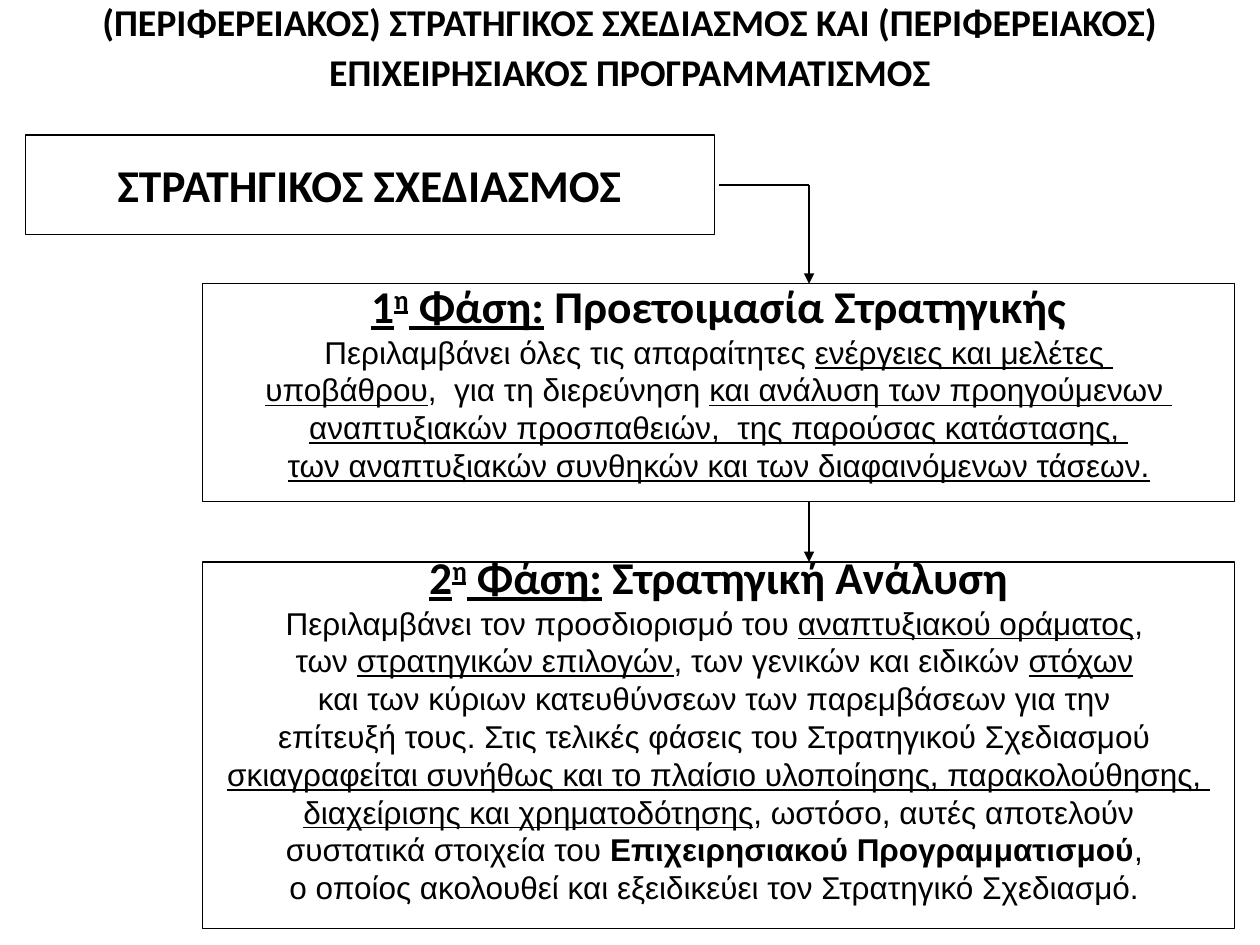
from pptx import Presentation
from pptx.dml.color import RGBColor
from pptx.enum.shapes import MSO_CONNECTOR as Connector, MSO_SHAPE as Shape
from pptx.enum.text import MSO_ANCHOR as Anchor, PP_ALIGN as Align
from pptx.oxml.ns import qn
from pptx.util import Cm, Pt
from lxml.etree import SubElement

# Content: each body line is a list of (text, style); u = underlined, b = bold
TITLE = ("(ΠΕΡΙΦΕΡΕΙΑΚΟΣ) ΣΤΡΑΤΗΓΙΚΟΣ ΣΧΕΔΙΑΣΜΟΣ ΚΑΙ (ΠΕΡΙΦΕΡΕΙΑΚΟΣ) "
         "ΕΠΙΧΕΙΡΗΣΙΑΚΟΣ ΠΡΟΓΡΑΜΜΑΤΙΣΜΟΣ")
START = "ΣΤΡΑΤΗΓΙΚΟΣ ΣΧΕΔΙΑΣΜΟΣ"
PHASES = [
    {"number": "1", "name": "Προετοιμασία Στρατηγικής",
     "top": 5.72, "height": 4.39, "bottom_inset": 0.6,
     "lines": [
         [("Περιλαμβάνει όλες τις απαραίτητες ", ""), ("ενέργειες και μελέτες ", "u")],
         [("υποβάθρου", "u"), (",  για τη διερεύνηση ", ""),
          ("και ανάλυση των προηγούμενων ", "u")],
         [("αναπτυξιακών προσπαθειών,  της παρούσας κατάστασης, ", "u")],
         [("των αναπτυξιακών συνθηκών και των διαφαινόμενων τάσεων.", "u")],
     ]},
    {"number": "2", "name": "Στρατηγική Ανάλυση",
     "top": 11.33, "height": 7.39, "bottom_inset": 0.85,
     "lines": [
         [("Περιλαμβάνει τον προσδιορισμό του ", ""),
          ("αναπτυξιακού οράματος", "u"), (", ", "")],
         [("των ", ""), ("στρατηγικών επιλογών", "u"),
          (", των γενικών και ειδικών ", ""), ("στόχων", "u"), (" ", "")],
         [("και των κύριων κατευθύνσεων των παρεμβάσεων για την ", "")],
         [("επίτευξή τους. Στις τελικές φάσεις του Στρατηγικού Σχεδιασμού ", "")],
         [("σκιαγραφείται συνήθως και το πλαίσιο υλοποίησης, παρακολούθησης, ", "u")],
         [("διαχείρισης και χρηματοδότησης", "u"), (", ωστόσο, αυτές αποτελούν", "")],
         [("συστατικά στοιχεία του ", ""),
          ("Επιχειρησιακού Προγραμματισμού", "b"), (", ", "")],
         [("ο οποίος ακολουθεί και εξειδικεύει τον Στρατηγικό Σχεδιασμό. ", "")],
     ]},
]

THEME = {
    "ink": RGBColor(0, 0, 0),
    "title": ("Calibri", 21.6), "heading": ("Calibri", 26), "body": ("Arial", 18),
    "title_pitch": 28.5, "box_line": 0.75, "arrow_line": 1, "superscript": "30000",
}

# Layout in centimetres
START_BOX = (0.51, 2.72, 13.89, 2.01)
PHASE_LEFT, PHASE_WIDTH = 4.09, 20.8
ARROW_X, ARROW_GAP = 16.31, 0.1


def write_line(paragraph, pieces, role):
    paragraph.alignment = Align.CENTER
    name, size = THEME[role]
    for text, style in pieces:
        run = paragraph.add_run()
        run.text = text
        font = run.font
        font.name, font.size = name, Pt(size)
        font.color.rgb = THEME["ink"]
        font.bold, font.underline = "b" in style, "u" in style
        if "^" in style:
            font._element.set("baseline", THEME["superscript"])


def set_frame(frame, wrap, bottom_inset=0.13):
    frame.word_wrap = wrap
    frame.vertical_anchor = Anchor.MIDDLE
    frame.margin_left = frame.margin_right = Cm(0.25)
    frame.margin_top, frame.margin_bottom = Cm(0.13), Cm(bottom_inset)


def add_box(slide, bounds, heading, lines=(), bottom_inset=0.13):
    box = slide.shapes.add_shape(Shape.RECTANGLE, *map(Cm, bounds))
    box.shadow.inherit = False
    box.fill.background()
    box.line.color.rgb = THEME["ink"]
    box.line.width = Pt(THEME["box_line"])
    frame = box.text_frame
    set_frame(frame, False, bottom_inset)
    write_line(frame.paragraphs[0], heading, "heading")
    for pieces in lines:
        write_line(frame.add_paragraph(), pieces, "body")


def add_line(slide, start, end, arrow=True):
    line = slide.shapes.add_connector(Connector.STRAIGHT, *map(Cm, start + end))
    line.line.color.rgb = THEME["ink"]
    line.line.width = Pt(THEME["arrow_line"])
    if arrow:
        SubElement(line.line._get_or_add_ln(), qn("a:tailEnd"), type="triangle")
    SubElement(line._element.spPr, qn("a:effectLst"))


def main():
    presentation = Presentation()
    presentation.slide_width, presentation.slide_height = Cm(25.4), Cm(19.05)
    slide = presentation.slides.add_slide(presentation.slide_layouts[6])

    # Title
    title = slide.shapes.add_textbox(0, 0, Cm(25.4), Cm(2.13)).text_frame
    set_frame(title, True, bottom_inset=0.48)
    title.paragraphs[0].line_spacing = Pt(THEME["title_pitch"])
    write_line(title.paragraphs[0], [(TITLE, "b")], "title")

    # Starting box and the phases below it
    add_box(slide, START_BOX, [(START, "b")])
    for phase in PHASES:
        heading = [(phase["number"], "bu"), ("η", "bu^"), (" Φάση:", "bu"),
                   (" " + phase["name"], "b")]
        bounds = (PHASE_LEFT, phase["top"], PHASE_WIDTH, phase["height"])
        add_box(slide, bounds, heading, phase["lines"], phase["bottom_inset"])

    # Elbow from the starting box, then the arrow between phases
    first, second = PHASES
    left, top, width, height = START_BOX
    middle = top + height / 2
    add_line(slide, (left + width + ARROW_GAP, middle), (ARROW_X, middle), arrow=False)
    add_line(slide, (ARROW_X, middle), (ARROW_X, first["top"]))
    add_line(slide, (ARROW_X, first["top"] + first["height"]), (ARROW_X, second["top"]))

    presentation.save("out.pptx")


if __name__ == "__main__":
    main()
